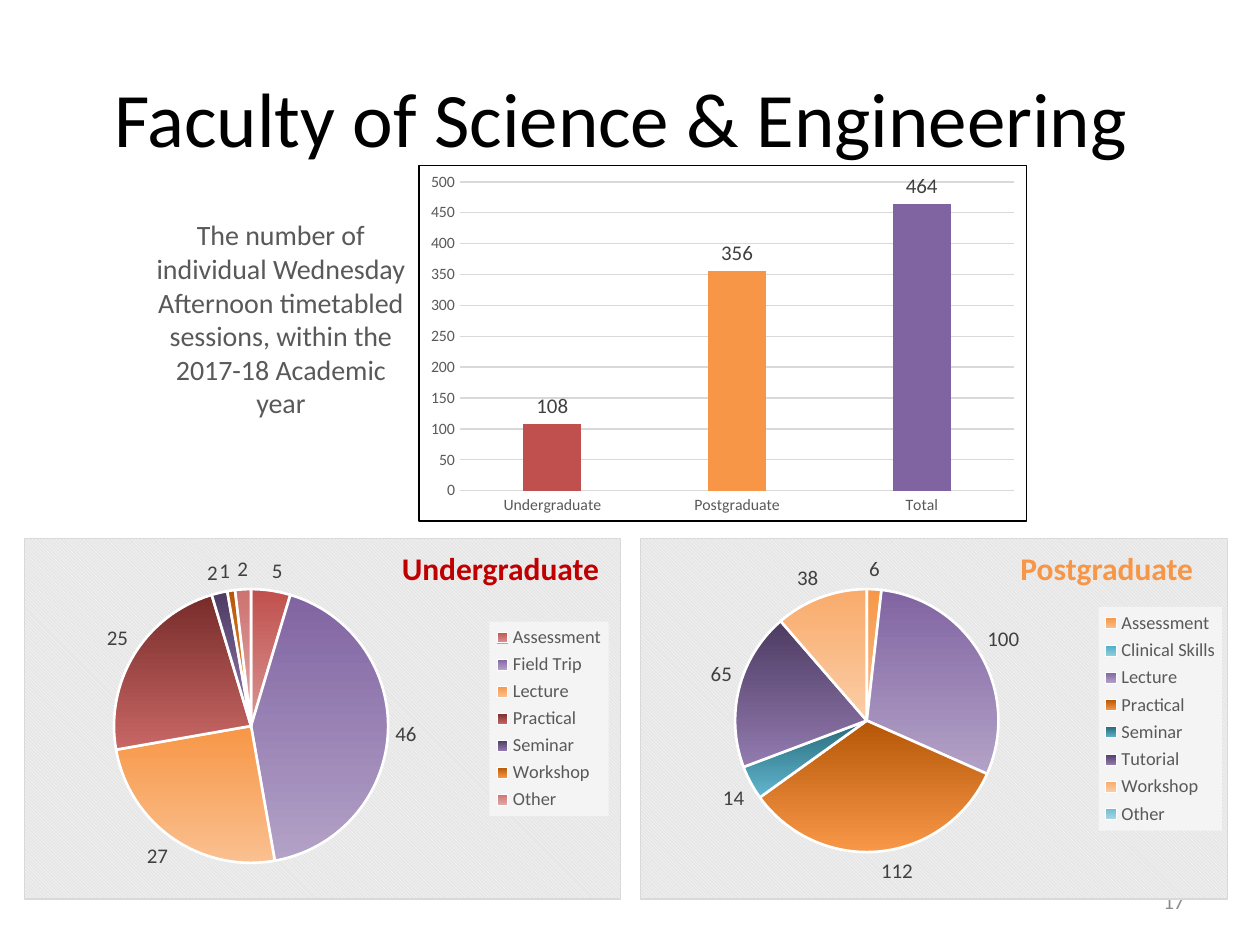
"""Build the Faculty of Science & Engineering timetable slide."""
from pptx import Presentation
from pptx.chart.data import CategoryChartData as Data
from pptx.dml.color import RGBColor
from pptx.enum.chart import XL_CHART_TYPE as Kind, XL_LABEL_POSITION as Spot
from pptx.enum.chart import XL_LEGEND_POSITION as Side, XL_TICK_MARK as Tick
from pptx.enum.text import MSO_ANCHOR as Anchor, PP_ALIGN as Align
from pptx.oxml import parse_xml
from pptx.oxml.ns import nsdecls, qn
from pptx.util import Pt

rgb = RGBColor.from_string


def add_text(text, box, size, color, align, anchor=Anchor.TOP, bold=False, wrap=True):
    frame = slide.shapes.add_textbox(*map(Pt, box)).text_frame
    frame.word_wrap = wrap
    frame.vertical_anchor = anchor
    frame.text = text
    para = frame.paragraphs[0]
    para.alignment = align
    font = para.runs[0].font
    font.name, font.size, font.bold = "Calibri", Pt(size), bold
    font.color.rgb = rgb(color)


def add_chart(kind, cats, vals, box, fill, line):
    data = Data(number_format="0;;")
    data.categories = cats
    data.add_series("Series 1", vals)
    chart = slide.shapes.add_chart(kind, *map(Pt, box), data).chart
    chart.has_title = chart.has_legend = False
    chart.font.name, chart.font.size = "Calibri", Pt(10)
    chart.font.color.rgb = rgb("000000")
    plot = chart.plots[0]
    plot.vary_by_categories = kind == Kind.PIE
    plot.has_data_labels = True
    tags = plot.data_labels
    tags.show_value, tags.position = True, Spot.OUTSIDE_END
    tags.font.name, tags.font.size = "Calibri", Pt(12)
    tags.font.color.rgb = rgb("404040")
    chart.element.find(qn("c:chart")).addnext(parse_xml(
        f'<c:spPr {nsdecls("c", "a")}>{fill}<a:ln w="9525"><a:solidFill>'
        f'<a:srgbClr val="{line}"/></a:solidFill></a:ln></c:spPr>'))
    return chart


deck = Presentation()
deck.slide_width, deck.slide_height = Pt(720), Pt(540)
slide = deck.slides.add_slide(deck.slide_layouts[6])

add_text("Faculty of Science & Engineering ", (36, 21.6, 648, 90), 44, "000000",
         Align.CENTER, Anchor.MIDDLE)
add_text("17", (516, 500.5, 168, 28.75), 12, "8C8C8C", Align.RIGHT, Anchor.MIDDLE)

bars = add_chart(Kind.COLUMN_CLUSTERED, ["Undergraduate", "Postgraduate", "Total"],
                 [108, 356, 464], (239, 94.3, 347.8, 203.8), "<a:noFill/>", "000000")
plot = bars.plots[0]
plot.gap_width, plot.overlap = 219, -27
for i, color in enumerate(["C0504D", "F79646", "8064A2"]):
    fill = plot.series[0].points[i].format.fill
    fill.solid()
    fill.fore_color.rgb = rgb(color)
for axis in (bars.category_axis, bars.value_axis):
    axis.major_tick_mark = axis.minor_tick_mark = Tick.NONE
    font = axis.tick_labels.font
    font.name, font.size = "Calibri", Pt(9)
    font.color.rgb = rgb("595959")
axis.tick_labels.number_format = "General"
axis.tick_labels.number_format_is_linked = False
axis.minimum_scale, axis.maximum_scale, axis.major_unit = 0, 500, 50
axis.format.line.fill.background()
for line in (bars.category_axis.format.line, axis.major_gridlines.format.line):
    line.color.rgb, line.width = rgb("D9D9D9"), Pt(0.75)

add_text("The number of individual Wednesday Afternoon timetabled sessions, "
         "within the 2017-18 Academic year", (82, 121, 157, 124), 16, "595959", Align.CENTER)

red, orange = ("C0504D", "D99694"), ("F79646", "FAC090")
purple, plum = ("8064A2", "B3A2C7"), ("4D3B62", "937BB0")
rust = ("B65708", "F79747")
pies = [
    ("Undergraduate", "C00000", (13.7, 307.5, 341.3, 206.6), (222.5, 310.3, 130.3, 28.8),
     (0.15, 0.14, 0.46, 0.76), (0.78, 0.23, 0.2, 0.54),
     [("Assessment", 5, red), ("Field Trip", 46, purple), ("Lecture", 27, orange),
      ("Practical", 25, ("772C2A", "C86765")), ("Seminar", 2, plum),
      ("Workshop", 1, rust), ("Other", 2, ("CD7371", "E1ABAA"))]),
    ("Postgraduate", "F79646", (365.8, 307.5, 336.2, 206.6), (576, 310.3, 113.8, 28.8),
     (0.16, 0.14, 0.45, 0.73), (0.78, 0.19, 0.21, 0.62),
     [("Assessment", 6, orange), ("Clinical Skills", 0, ("4BACC6", "93CDDD")),
      ("Lecture", 100, purple), ("Practical", 112, rust),
      ("Seminar", 14, ("276A7C", "61B6CD")), ("Tutorial", 65, plum),
      ("Workshop", 38, ("F9AB6B", "FBCDA6")), ("Other", 0, ("6FBDD1", "A9D7E4"))]),
]
hatch = ('<a:pattFill prst="dkDnDiag"><a:fgClr><a:srgbClr val="FFFFFF"/></a:fgClr>'
         '<a:bgClr><a:srgbClr val="E6E6E6"/></a:bgClr></a:pattFill>')
for name, color, box, head, area, keybox, rows in pies:
    cats, vals, fades = zip(*rows)
    pie = add_chart(Kind.PIE, cats, vals, box, hatch, "D9D9D9")
    for i, fade in enumerate(fades):
        form = pie.plots[0].series[0].points[i].format
        form.fill.gradient()
        form.fill.gradient_angle = 270
        for stop, tone in zip(form.fill.gradient_stops, fade):
            stop.color.rgb = rgb(tone)
        form.line.color.rgb, form.line.width = rgb("FFFFFF"), Pt(1.5)
    pie.has_legend = True
    key = pie.legend
    key.position, key.include_in_layout = Side.RIGHT, False
    key.font.name, key.font.size = "Calibri", Pt(10.5)
    key.font.color.rgb = rgb("595959")
    root = pie.element
    legend = root.find(".//" + qn("c:legend"))
    legend.find(qn("c:overlay")).addnext(parse_xml(
        f'<c:spPr {nsdecls("c", "a")}><a:solidFill><a:srgbClr val="F4F4F4"/>'
        '</a:solidFill></c:spPr>'))
    for node, spot, inner in ((root.find(".//" + qn("c:plotArea")), area, True),
                              (legend, keybox, False)):
        for old in node.findall(qn("c:layout")):
            node.remove(old)
        target = '<c:layoutTarget val="inner"/>' if inner else ""
        modes = "".join(f'<c:{k}Mode val="edge"/>' for k in "xy")
        sizes = "".join(f'<c:{k} val="{v}"/>' for k, v in zip("xywh", spot))
        node.insert(0 if inner else 1, parse_xml(
            f'<c:layout {nsdecls("c")}><c:manualLayout>{target}{modes}{sizes}'
            '</c:manualLayout></c:layout>'))
    add_text(name, head, 18, color, Align.LEFT, bold=True, wrap=False)

deck.save("out.pptx")
